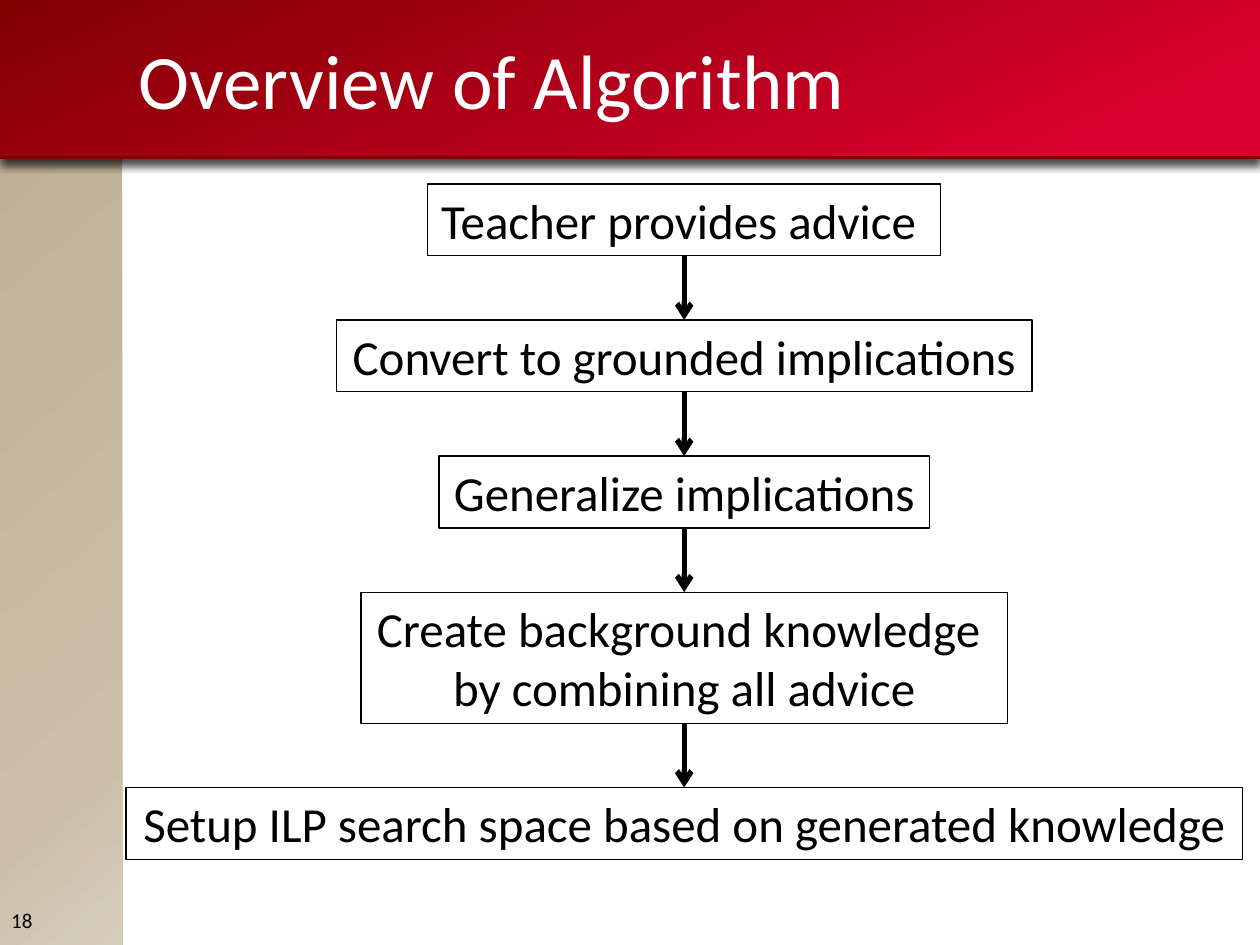
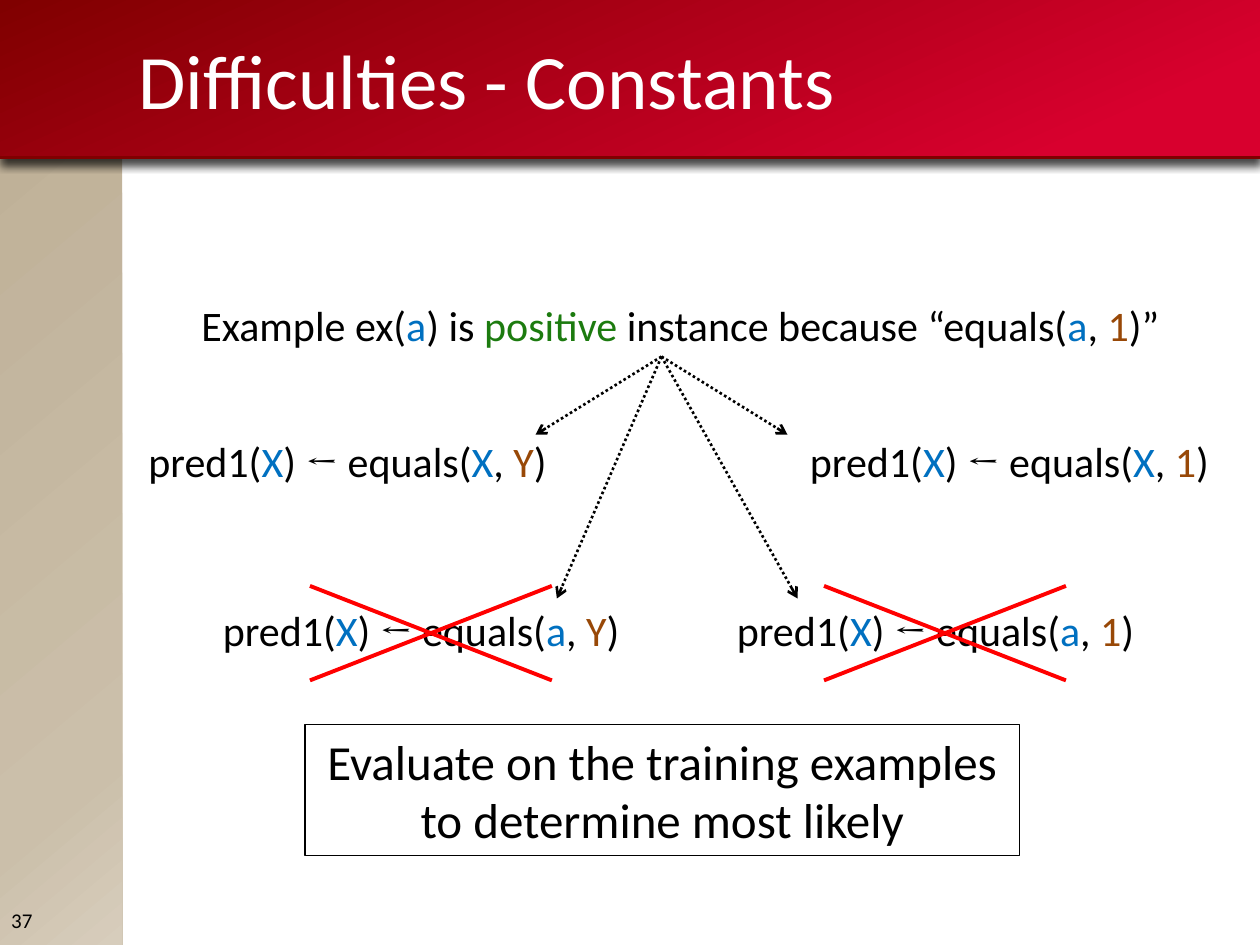
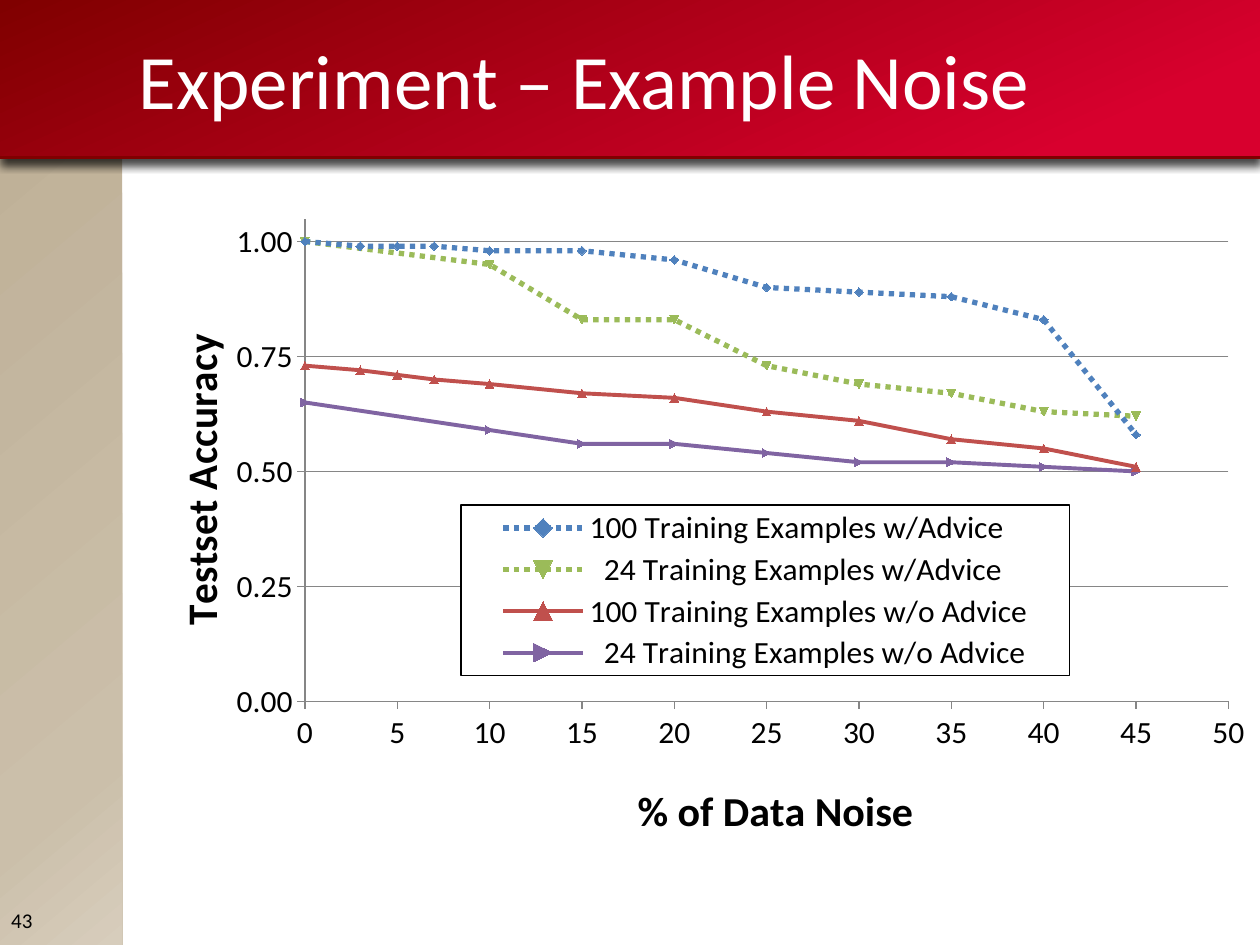
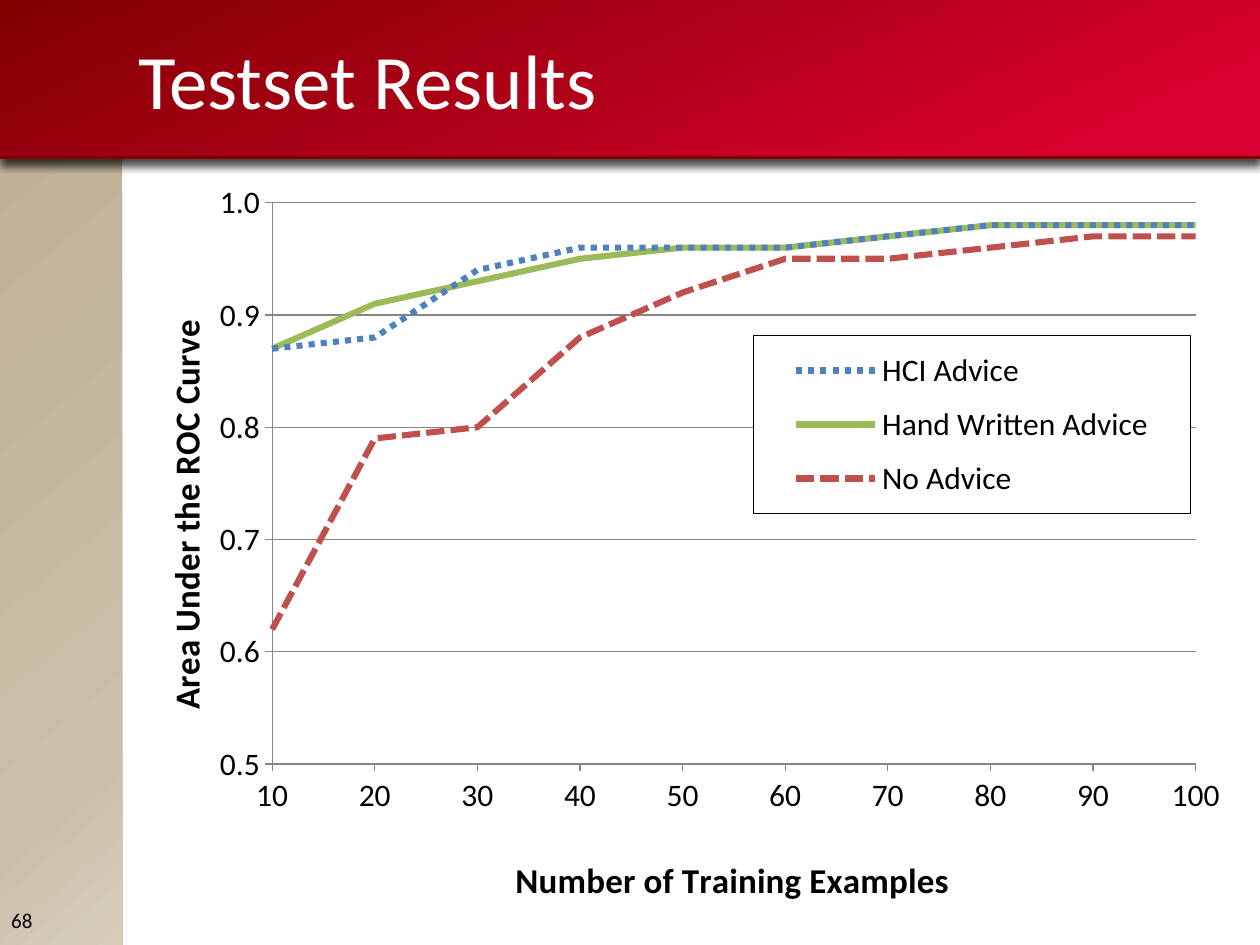
from lxml import etree
from pptx import Presentation
from pptx.chart.data import XyChartData
from pptx.dml.color import RGBColor
from pptx.enum import chart as ch, dml, shapes, text
from pptx.oxml import parse_xml
from pptx.oxml.ns import nsdecls, qn
from pptx.util import Inches, Pt

FONT = "Calibri"
BLACK, WHITE, RED, GREY = "000000", "FFFFFF", "FF0000", "868686"
CONSTANT, VALUE, POSITIVE = "0070C0", "984807", "1C7B0F"
BLUE, GREEN, BRICK, PURPLE = "4F81BD", "9BBB59", "C0504D", "8064A2"
DOTS, DASHES = dml.MSO_LINE.ROUND_DOT, dml.MSO_LINE.SQUARE_DOT
MARGIN, BAND_H = 1, 1.25


def rgb(value):
    return RGBColor.from_string(value)


def inches(*values):
    return [Inches(v) for v in values]


def set_font(font, size, color=BLACK, name=FONT, bold=None):
    values = {"size": Pt(size), "name": name, "bold": bold}
    for key, value in values.items():
        setattr(font, key, value)
    font.color.rgb = rgb(color)


def set_line(line, color, width, dash=None):
    line.color.rgb = rgb(color)
    line.width = Pt(width)
    if dash is not None:
        line.dash_style = dash


def write(shape, spans, size, wrap=True, **paragraph):
    """Fill a shape with one paragraph of (text, colour, font) spans."""
    tf = shape.text_frame
    tf.word_wrap = wrap
    p = tf.paragraphs[0]
    for key, value in paragraph.items():
        setattr(p, key, value)
    for words, *style in spans:
        r = p.add_run()
        r.text = words
        set_font(r.font, size, *style)
    return tf


def add_text(s, box, spans, size=24, **paragraph):
    shape = s.shapes.add_textbox(*inches(*box))
    write(shape, spans, size, **paragraph)
    return shape


def add_outlined(s, box, lines, wrap=False):
    shape = s.shapes.add_shape(shapes.MSO_SHAPE.RECTANGLE, *inches(*box))
    shape.shadow.inherit = False
    shape.fill.background()
    set_line(shape.line, BLACK, 0.75)
    tf = shape.text_frame
    tf.word_wrap = wrap
    tf.auto_size = text.MSO_AUTO_SIZE.SHAPE_TO_FIT_TEXT
    p = tf.paragraphs[0]
    p.text = "\v".join(lines)
    p.alignment = text.PP_ALIGN.CENTER
    for r in p.runs:
        set_font(r.font, 28)
    return shape


def add_line(s, start, end, color, width, dash=None, arrow=False):
    c = s.shapes.add_connector(shapes.MSO_CONNECTOR.STRAIGHT, *inches(*start, *end))
    set_line(c.line, color, width, dash)
    sp_pr = c.element.spPr
    if arrow:
        etree.SubElement(sp_pr.find(qn("a:ln")), qn("a:tailEnd"), type="arrow")
    etree.SubElement(sp_pr, qn("a:effectLst"))
    return c


# ---- shared frame -------------------------------------------------------

def add_gradient_band(s, box, stops, angle):
    sp = s.shapes.add_shape(shapes.MSO_SHAPE.RECTANGLE, *inches(*box))
    sp.shadow.inherit = False
    sp.line.fill.background()
    marks = "".join(f'<a:gs pos="{pos * 1000}"><a:srgbClr val="{color}"/></a:gs>'
                    for pos, color in stops)
    gradient = parse_xml(f'<a:gradFill {nsdecls("a")} rotWithShape="1"><a:gsLst>{marks}</a:gsLst>'
                         f'<a:lin ang="{angle * 60000}" scaled="0"/></a:gradFill>')
    sp.element.spPr.find(qn("a:prstGeom")).addnext(gradient)
    return sp


def build_layout(layout, s):
    """Draw the bands on slide s, then hand them to the layout all slides share."""
    side = add_gradient_band(s, (-0.01, 1.08, 0.98, 6.42),
                             [(0, "BFB198"), (79, "CBBFAA"), (100, "D7CDBC")], 50)
    band = add_gradient_band(s, (-0.01, 0, 10.02, BAND_H), [(0, "800000"), (87, "D8002E")], 66)
    band.element.spPr.find(qn("a:effectLst")).append(parse_xml(
        f'<a:outerShdw {nsdecls("a")} blurRad="{Pt(5)}" dist="{Pt(4)}" dir="5400000" '
        'algn="t" rotWithShape="0"><a:srgbClr val="000000"><a:alpha val="72000"/>'
        '</a:srgbClr></a:outerShdw>'))
    edge = add_line(s, (-0.01, BAND_H), (10, BAND_H), "800000", 2)
    for place, part in enumerate((side, band, edge), start=2):
        layout.shapes.element.insert(place, part.element)


def fill_frame(s, title, number):
    sp = s.shapes.title
    sp.left, sp.top, sp.width, sp.height = inches(MARGIN, 0, 8.67, BAND_H)
    tf = write(sp, [(title, WHITE)], 44, alignment=text.PP_ALIGN.LEFT)
    tf.vertical_anchor = text.MSO_ANCHOR.MIDDLE
    page = add_text(s, (-0.01, 7.1, 0.98, 0.4), [(number,)], 12)
    page.text_frame.vertical_anchor = text.MSO_ANCHOR.MIDDLE


# ---- flow of steps ------------------------------------------------------

def build_flow(s, center, top, gap=0.51):
    steps = [
        (4.07, ["Teacher provides advice "]),
        (5.52, ["Convert to grounded implications"]),
        (3.89, ["Generalize implications"]),
        (5.13, ["Create background knowledge ", "by combining all advice"]),
        (8.86, ["Setup ILP search space based on generated knowledge"]),
    ]
    boxes = []
    for width, lines in steps:
        height = 0.1 + 0.47 * len(lines)
        boxes.append(add_outlined(s, (center - width / 2, top, width, height), lines))
        top += height + gap
    for upper, lower in zip(boxes, boxes[1:]):
        c = add_line(s, (center, 0), (center, 1), BLACK, 3, arrow=True)
        c.begin_connect(upper, 2)
        c.end_connect(lower, 0)


# ---- candidate rules ----------------------------------------------------

def rule_spans(first, second):
    return [("pred1(",), ("X", CONSTANT), (") ",), ("← ", BLACK, "Cambria"), ("equals(",),
            (first, CONSTANT), (", ",), (second, VALUE), (")",)]


def cross_out(s, left, top, width=1.92, height=0.75):
    right, bottom = left + width, top + height
    add_line(s, (right, top), (left, bottom), RED, 2.25)
    add_line(s, (left, top), (right, bottom), RED, 2.25)


def build_candidates(s, left, top):
    example = add_text(s, (left, top, 8.5, 0.5), [
        ("Example ex(",), ("a", CONSTANT), (") is ",), ("positive ", POSITIVE),
        ("instance because “equals(",), ("a", CONSTANT), (", ",), ("1", VALUE), (")”",)], level=1)
    p_pr = example.text_frame.paragraphs[0]._p.get_or_add_pPr()
    p_pr.set("marL", str(Inches(0.5)))
    p_pr.set("indent", "0")

    width = 3.5
    near, far = top + 1.08, top + 2.42
    # left, top, arguments, arrow end, rejected
    rules = [
        (left + 0.08, near, "XY", (left + 3.25, top + 1.12), False),
        (left + 5.33, near, "X1", (left + 5.25, top + 1.12), False),
        (left + 0.67, far, "aY", (left + 3.42, far), True),
        (left + 4.75, far, "a1", (left + 5.33, far), True),
    ]
    for x, y, arguments, tip, rejected in rules:
        add_text(s, (x, y, width, 0.5), rule_spans(*arguments))
        arrow = add_line(s, (left + 4.25, top + 0.5), tip, BLACK, 1.5, DOTS, arrow=True)
        arrow.begin_connect(example, 2)
        if rejected:
            cross_out(s, x + width / 2 - 0.96, y - 0.1)
    add_outlined(s, (left + 1.42, top + 3.42, 5.67, 1.04),
                 ["Evaluate on the training examples to determine most likely"], wrap=True)


# ---- charts -------------------------------------------------------------

def place_part(part, index, size, area, inner=False):
    """Fix a chart part at area, in inches from the corner of a chart of this size."""
    for auto in part.findall(qn("c:layout")):
        part.remove(auto)
    target = '<c:layoutTarget val="inner"/>' if inner else ""
    shares = "".join(f'<c:{key} val="{value / whole:.4f}"/>'
                     for key, value, whole in zip("xywh", area, size * 2))
    part.insert(index, parse_xml(
        f'<c:layout {nsdecls("c")}><c:manualLayout>{target}<c:xMode val="edge"/>'
        f'<c:yMode val="edge"/>{shares}</c:manualLayout></c:layout>'))


def format_axis(axis, size, title, title_size, title_at, number_format, **scale):
    axis.has_title = True
    tf = axis.axis_title.text_frame
    tf.text = title
    set_font(tf.paragraphs[0].runs[0].font, title_size, bold=True)
    place_part(axis.axis_title._element, 1, size, title_at)
    for key, value in scale.items():
        setattr(axis, key, value)
    axis.major_tick_mark = ch.XL_TICK_MARK.OUTSIDE
    axis.minor_tick_mark = ch.XL_TICK_MARK.NONE
    set_line(axis.format.line, GREY, 0.75)
    set_font(axis.tick_labels.font, 18)
    axis.tick_labels.number_format = number_format
    axis.tick_labels.number_format_is_linked = False


def format_legend(chart, size, area):
    chart.has_legend = True
    chart.legend.position = ch.XL_LEGEND_POSITION.RIGHT
    chart.legend.include_in_layout = True
    set_font(chart.legend.font, 18)
    legend = chart.legend._element
    place_part(legend, 1, size, area)
    legend.find(qn("c:txPr")).addprevious(parse_xml(
        f'<c:spPr {nsdecls("c", "a")}><a:solidFill><a:srgbClr val="{WHITE}"/></a:solidFill>'
        f'<a:ln w="{Pt(0.75)}"><a:solidFill><a:srgbClr val="{BLACK}"/></a:solidFill></a:ln></c:spPr>'))


def build_chart(s, box, kind, series, plot_area, legend_area, x_axis, y_axis):
    """Draw series of (name, xs, ys, colour, width, dash, marker)."""
    size = box[2:]
    data = XyChartData()
    for name, xs, ys, *_ in series:
        points = data.add_series(name)
        for x, y in zip(xs, ys):
            points.add_data_point(x, y)
    chart = s.shapes.add_chart(kind, *inches(*box), data).chart
    chart.has_title = False
    set_font(chart.font, 18)
    plot = chart.plots[0]
    plot.vary_by_categories = False
    for item, (*_, color, width, dash, marker) in zip(plot.series, series):
        set_line(item.format.line, color, width, dash)
        if marker is not None:
            item.marker.style = marker
            item.marker.size = 5
            item.marker.format.fill.solid()
            item.marker.format.fill.fore_color.rgb = rgb(color)
            set_line(item.marker.format.line, color, 0.75)
    format_axis(chart.category_axis, size, **x_axis)
    format_axis(chart.value_axis, size, **y_axis)
    chart.category_axis.has_major_gridlines = False
    chart.value_axis.has_major_gridlines = True
    set_line(chart.value_axis.major_gridlines.format.line, GREY, 0.75)
    place_part(chart.element.find(".//" + qn("c:plotArea")), 0, size, plot_area, inner=True)
    format_legend(chart, size, legend_area)


def build_noise_chart(s, box):
    coarse = [0, *range(10, 50, 5)]
    fine = [0, 3, 5, 7, *coarse[1:]]
    marker = ch.XL_MARKER_STYLE
    series = [
        ("100 Training Examples w/Advice", fine,
         [1, 0.99, 0.99, 0.99, 0.98, 0.98, 0.96, 0.9, 0.89, 0.88, 0.83, 0.58],
         BLUE, 3, DOTS, marker.DIAMOND),
        ("  24 Training Examples w/Advice", coarse,
         [1, 0.95, 0.83, 0.83, 0.73, 0.69, 0.67, 0.63, 0.62],
         GREEN, 3, DOTS, marker.AUTOMATIC),
        ("100 Training Examples w/o Advice", fine,
         [0.73, 0.72, 0.71, 0.7, 0.69, 0.67, 0.66, 0.63, 0.61, 0.57, 0.55, 0.51],
         BRICK, 2.25, None, marker.TRIANGLE),
        ("  24 Training Examples w/o Advice", coarse,
         [0.65, 0.59, 0.56, 0.56, 0.54, 0.52, 0.52, 0.51, 0.5],
         PURPLE, 2.25, None, marker.DOT),
    ]
    build_chart(
        s, box, ch.XL_CHART_TYPE.XY_SCATTER_LINES, series,
        plot_area=(1.25, 0.24, 7.33, 3.91), legend_area=(2.49, 2.56, 4.83, 1.38),
        x_axis=dict(title="% of Data Noise ", title_size=24, title_at=(3.83, 4.75),
                    number_format="General", minimum_scale=0),
        y_axis=dict(title="Testset Accuracy", title_size=24, title_at=(0.14, 1.16),
                    number_format="0.00", minimum_scale=0, maximum_scale=1.05,
                    major_unit=0.25))


def build_results_chart(s, box):
    sizes = range(10, 101, 10)
    series = [
        ("HCI Advice", sizes, [0.87, 0.88, 0.94, 0.96, 0.96, 0.96, 0.97, 0.98, 0.98, 0.98],
         BLUE, 3.5, DOTS, None),
        ("Hand Written Advice", sizes,
         [0.87, 0.91, 0.93, 0.95, 0.96, 0.96, 0.97, 0.98, 0.98, 0.98],
         GREEN, 3.5, None, None),
        ("No Advice", sizes, [0.62, 0.79, 0.8, 0.88, 0.92, 0.95, 0.95, 0.96, 0.97, 0.97],
         BRICK, 3.5, DASHES, None),
    ]
    build_chart(
        s, box, ch.XL_CHART_TYPE.XY_SCATTER_LINES_NO_MARKERS, series,
        plot_area=(1.16, 0.19, 7.33, 4.48), legend_area=(4.98, 1.25, 3.47, 1.42),
        x_axis=dict(title="Number of Training Examples", title_size=20, title_at=(3.04, 5.35),
                    number_format="#,##0", minimum_scale=10, maximum_scale=100, major_unit=10),
        y_axis=dict(title="Area Under the ROC Curve", title_size=20, title_at=(0.23, 1.09),
                    number_format="#,##0.0", minimum_scale=0.5, maximum_scale=1,
                    major_unit=0.1))


def main():
    prs = Presentation()
    prs.slide_width, prs.slide_height = inches(10, 7.5)
    layout = prs.slide_layouts[5]
    pages = [
        ("Overview of Algorithm", "18", build_flow, (5.43, 1.46)),
        ("Difficulties - Constants", "37", build_candidates, (MARGIN, 2.33)),
        ("Experiment – Example Noise", "43", build_noise_chart, [(1.17, 1.5, 8.83, 5.25)]),
        ("Testset Results", "68", build_results_chart, [(MARGIN, 1.42, 9, 5.83)]),
    ]
    for title, number, build, place in pages:
        s = prs.slides.add_slide(layout)
        if len(prs.slides) == 1:
            build_layout(layout, s)
        fill_frame(s, title, number)
        build(s, *place)
    prs.save("out.pptx")


if __name__ == "__main__":
    main()
